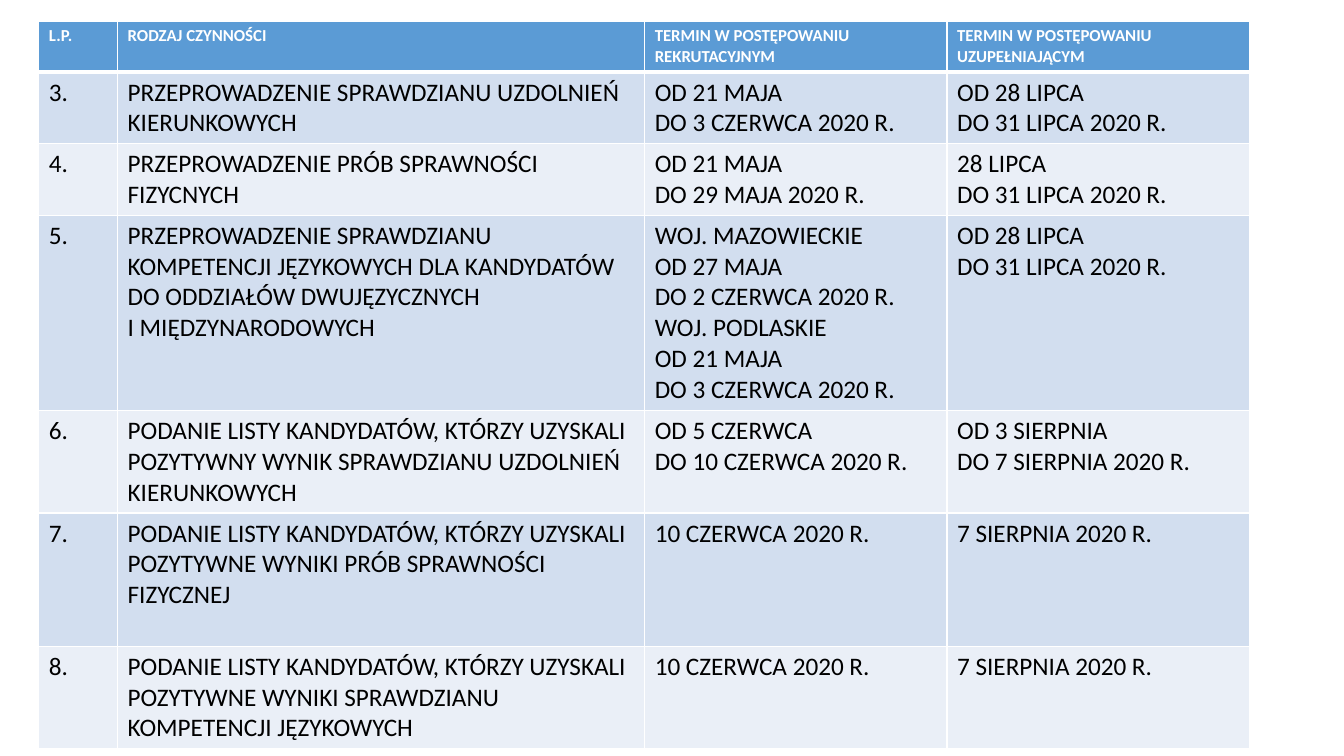
from dataclasses import dataclass

from lxml.etree import SubElement
from pptx import Presentation
from pptx.dml.color import RGBColor
from pptx.oxml.ns import qn
from pptx.table import _Cell
from pptx.util import Emu, Pt

EMU_PER_PX = 9525
SLIDE_WIDTH, SLIDE_HEIGHT = 1280, 720
TABLE_LEFT, TABLE_TOP = 37, 20
COLUMN_WIDTHS = (75, 502, 288, 288)

FONT = "Calibri"
WHITE = RGBColor(0xFF, 0xFF, 0xFF)
BLACK = RGBColor(0x00, 0x00, 0x00)
HEADER_BLUE = RGBColor(0x5B, 0x9B, 0xD5)
BAND_DARK = RGBColor(0xD2, 0xDE, 0xEF)
BAND_LIGHT = RGBColor(0xEA, 0xEF, 0xF7)


@dataclass(frozen=True)
class RowStyle:
    fill: RGBColor
    color: RGBColor
    size: int
    bold: bool


@dataclass(frozen=True)
class ScheduleRow:
    """Each cell is a tuple of paragraphs; a newline is a line break."""
    height: int
    number: tuple[str, ...]
    activity: tuple[str, ...]
    main_term: tuple[str, ...]
    extra_term: tuple[str, ...]

    def cells(self) -> tuple[tuple[str, ...], ...]:
        return self.number, self.activity, self.main_term, self.extra_term


HEADER_STYLE = RowStyle(HEADER_BLUE, WHITE, 12, True)
BAND_STYLES = (RowStyle(BAND_DARK, BLACK, 18, False),
               RowStyle(BAND_LIGHT, BLACK, 18, False))

ROWS = (
    ScheduleRow(47, ("L.P.",), ("RODZAJ CZYNNOŚCI",),
                ("TERMIN W POSTĘPOWANIU REKRUTACYJNYM",),
                ("TERMIN W POSTĘPOWANIU UZUPEŁNIAJĄCYM",)),
    ScheduleRow(68, ("3.",),
                ("PRZEPROWADZENIE SPRAWDZIANU UZDOLNIEŃ KIERUNKOWYCH",),
                ("OD 21 MAJA\nDO 3 CZERWCA 2020 R.",),
                ("OD 28 LIPCA\nDO 31 LIPCA 2020 R.",)),
    ScheduleRow(68, ("4.",),
                ("PRZEPROWADZENIE PRÓB SPRAWNOŚCI FIZYCNYCH",),
                ("OD 21 MAJA\nDO 29 MAJA 2020 R.",),
                ("28 LIPCA\nDO 31 LIPCA 2020 R.",)),
    ScheduleRow(186, ("5.",),
                ("PRZEPROWADZENIE SPRAWDZIANU KOMPETENCJI JĘZYKOWYCH DLA "
                 "KANDYDATÓW DO ODDZIAŁÓW DWUJĘZYCZNYCH\nI MIĘDZYNARODOWYCH",),
                ("WOJ. MAZOWIECKIE\nOD 27 MAJA\nDO 2 CZERWCA 2020 R.",
                 "WOJ. PODLASKIE\nOD 21 MAJA\nDO 3 CZERWCA 2020 R."),
                ("OD 28 LIPCA\nDO 31 LIPCA 2020 R.",)),
    ScheduleRow(97, ("6.",),
                ("PODANIE LISTY KANDYDATÓW, KTÓRZY UZYSKALI POZYTYWNY WYNIK "
                 "SPRAWDZIANU UZDOLNIEŃ KIERUNKOWYCH",),
                ("OD 5 CZERWCA\nDO 10 CZERWCA 2020 R.",),
                ("OD 3 SIERPNIA\nDO 7 SIERPNIA 2020 R.",)),
    ScheduleRow(127, ("7.",),
                ("PODANIE LISTY KANDYDATÓW, KTÓRZY UZYSKALI POZYTYWNE WYNIKI "
                 "PRÓB SPRAWNOŚCI FIZYCZNEJ",),
                ("10 CZERWCA 2020 R.",), ("7 SIERPNIA 2020 R.",)),
    ScheduleRow(97, ("8.",),
                ("PODANIE LISTY KANDYDATÓW, KTÓRZY UZYSKALI POZYTYWNE WYNIKI "
                 "SPRAWDZIANU KOMPETENCJI JĘZYKOWYCH",),
                ("10 CZERWCA 2020 R.",), ("7 SIERPNIA 2020 R.",)),
)


def px(length: int) -> Emu:
    return Emu(length * EMU_PER_PX)


def write_text(cell: _Cell, paragraphs: tuple[str, ...], style: RowStyle) -> None:
    frame = cell.text_frame
    for index, text in enumerate(paragraphs):
        paragraph = frame.add_paragraph() if index else frame.paragraphs[0]
        for line_index, line in enumerate(text.split("\n")):
            if line_index:
                paragraph.add_line_break()
            run = paragraph.add_run()
            run.text = line
            run.font.name = FONT
            run.font.size = Pt(style.size)
            run.font.bold = style.bold
            run.font.color.rgb = style.color


def set_borders(cell: _Cell, top: int, bottom: int) -> None:
    """Draw white borders; the schema wants them ahead of the cell fill."""
    properties = cell._tc.get_or_add_tcPr()
    widths = {"a:lnL": 1, "a:lnR": 1, "a:lnT": top, "a:lnB": bottom}
    for position, (tag, width) in enumerate(widths.items()):
        line = SubElement(properties, qn(tag), w=str(Pt(width)))
        fill = SubElement(line, qn("a:solidFill"))
        SubElement(fill, qn("a:srgbClr"), val=str(WHITE))
        properties.insert(position, line)


def main() -> None:
    presentation = Presentation()
    presentation.slide_width = px(SLIDE_WIDTH)
    presentation.slide_height = px(SLIDE_HEIGHT)
    slide = presentation.slides.add_slide(presentation.slide_layouts[6])

    table = slide.shapes.add_table(
        len(ROWS), len(COLUMN_WIDTHS), px(TABLE_LEFT), px(TABLE_TOP),
        px(sum(COLUMN_WIDTHS)), px(sum(row.height for row in ROWS))).table
    table.horz_banding = False
    for column, width in zip(table.columns, COLUMN_WIDTHS):
        column.width = px(width)

    for row_index, row in enumerate(ROWS):
        table.rows[row_index].height = px(row.height)
        style = BAND_STYLES[(row_index - 1) % 2] if row_index else HEADER_STYLE
        for column_index, paragraphs in enumerate(row.cells()):
            cell = table.cell(row_index, column_index)
            cell.fill.solid()
            cell.fill.fore_color.rgb = style.fill
            set_borders(cell, top=3 if row_index == 1 else 1,
                        bottom=3 if row_index == 0 else 1)
            write_text(cell, paragraphs, style)

    presentation.save("out.pptx")


if __name__ == "__main__":
    main()
